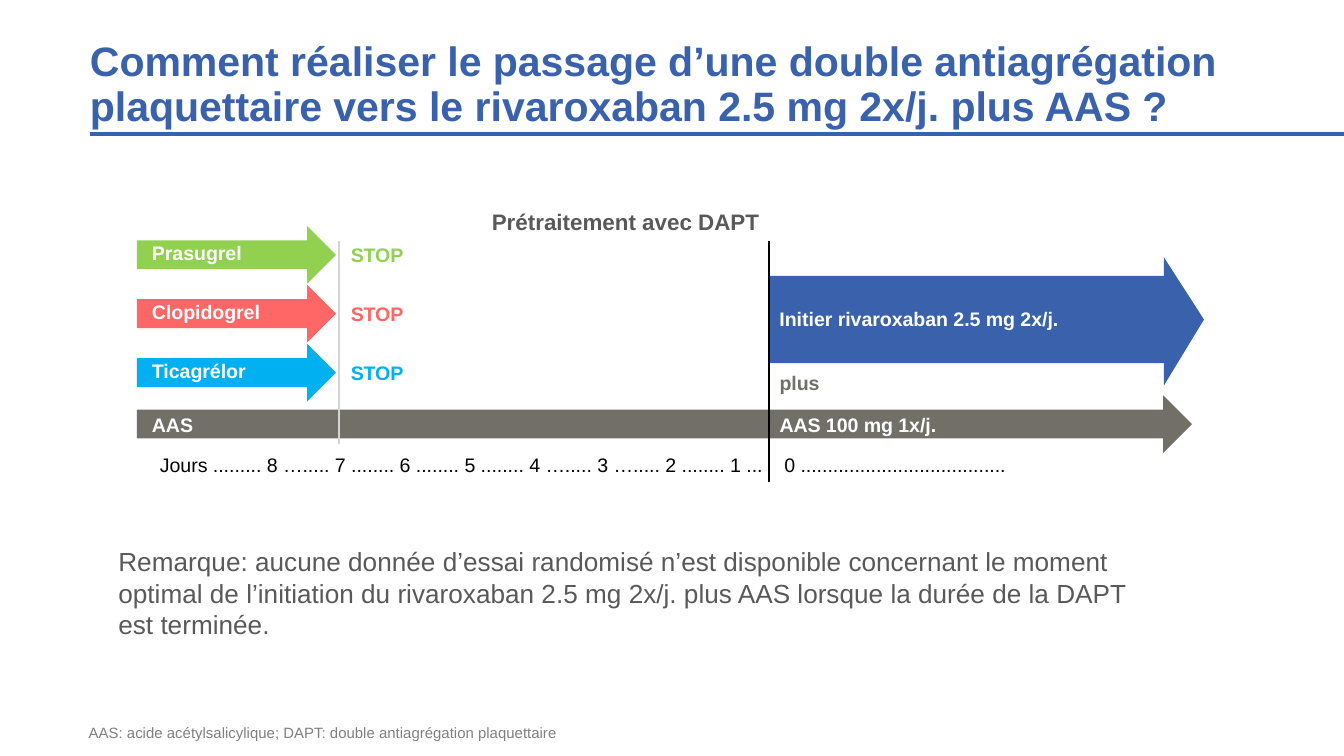
from dataclasses import dataclass

from lxml.etree import SubElement
from pptx import Presentation
from pptx.dml.color import RGBColor
from pptx.enum.shapes import MSO_CONNECTOR, MSO_SHAPE
from pptx.enum.text import MSO_ANCHOR, MSO_AUTO_SIZE, PP_ALIGN
from pptx.oxml.ns import qn
from pptx.util import Pt


@dataclass(frozen=True)
class Theme:
    font: str = "Arial"
    blue: str = "3961AC"
    green: str = "92D050"
    red: str = "FF6666"
    cyan: str = "00B0F0"
    taupe: str = "726F69"
    text: str = "595959"
    footnote: str = "808080"
    rule: str = "D5D4D2"
    white: str = "FFFFFF"
    black: str = "000000"
    title_size: float = 22
    note_size: float = 14
    heading_size: float = 12
    label_size: float = 10.5
    footnote_size: float = 8


T = Theme()

ARROW_LEFT, ARROW_H = 73.4, 31
LABEL_LEFT, STOP_LEFT = 81.4, 187.9
START_X, START_LABEL_LEFT = 411.8, 417.6
FIRST_ROW, ROW_STEP = 121, 31.6


def place(s, left, top, width, height):
    s.left, s.top, s.width, s.height = Pt(left), Pt(top), Pt(width), Pt(height)


def write(s, text, size, color, bold=False, anchor=MSO_ANCHOR.TOP, tab=None):
    tf = s.text_frame
    tf.word_wrap = True
    tf.auto_size = MSO_AUTO_SIZE.NONE
    tf.vertical_anchor = anchor
    tf.margin_left = tf.margin_top = tf.margin_right = tf.margin_bottom = 0
    tf.text = text
    p = tf.paragraphs[0]
    p.alignment = PP_ALIGN.LEFT
    if tab:
        tabs = SubElement(p._p.get_or_add_pPr(), qn("a:tabLst"))
        SubElement(tabs, qn("a:tab"), pos=str(Pt(tab)), algn="l")
    p.font.name = T.font
    p.font.size = Pt(size)
    p.font.bold = bold
    p.font.color.rgb = RGBColor.from_string(color)
    return p


def add_title(sld, text):
    s = sld.shapes.title
    place(s, 48.2, 21.6, 652.3, 48.2)
    p = write(s, text, T.title_size, T.blue, True, MSO_ANCHOR.BOTTOM)
    p.line_spacing = 0.9


def add_text(sld, text, left, top, width, height, size, color, **style):
    s = sld.shapes.add_textbox(Pt(left), Pt(top), Pt(width), Pt(height))
    write(s, text, size, color, **style)


def add_label(sld, text, left, top, width, color=T.white):
    add_text(sld, text, left, top, width, 15, T.label_size, color, bold=True)


def paint(s, color):
    s.shadow.inherit = False
    s.fill.solid()
    s.fill.fore_color.rgb = RGBColor.from_string(color)
    s.line.fill.background()


def add_arrow(sld, top, width, color):
    s = sld.shapes.add_shape(MSO_SHAPE.RIGHT_ARROW, Pt(ARROW_LEFT), Pt(top),
                             Pt(width), Pt(ARROW_H))
    paint(s, color)


def add_block_arrow(sld, points, color):
    start, *rest = [(Pt(x), Pt(y)) for x, y in points]
    fb = sld.shapes.build_freeform(*start)
    fb.add_line_segments(rest, close=True)
    paint(fb.convert_to_shape(), color)


def add_line(sld, x1, y1, x2, y2, color, width):
    s = sld.shapes.add_connector(MSO_CONNECTOR.STRAIGHT,
                                 Pt(x1), Pt(y1), Pt(x2), Pt(y2))
    s.line.color.rgb = RGBColor.from_string(color)
    s.line.width = Pt(width)
    SubElement(s._element.spPr, qn("a:effectLst"))


def add_stopped_drugs(sld):
    drugs = [("Prasugrel", T.green), ("Clopidogrel", T.red), ("Ticagrélor", T.cyan)]
    for i, (name, color) in enumerate(drugs):
        top = FIRST_ROW + i * ROW_STEP
        add_arrow(sld, top, 106.6, color)
        add_label(sld, name, LABEL_LEFT, top + 7.9, 82)
        add_label(sld, "STOP", STOP_LEFT, top + 9.2, 42.5, color)


def add_continued_drugs(sld):
    add_arrow(sld, 211.7, 565.2, T.taupe)
    add_label(sld, "AAS", LABEL_LEFT, 221, 82)
    add_label(sld, "AAS 100 mg 1x/j.", START_LABEL_LEFT, 221, 140)
    add_block_arrow(sld, [(START_X, 147.8), (623.5, 147.8), (623.5, 137.8),
                          (645, 171.2), (623.5, 206.6), (623.5, 194.5),
                          (START_X, 194.5)], T.blue)
    add_label(sld, "Initier rivaroxaban 2.5 mg 2x/j.", START_LABEL_LEFT, 164.2, 204.5)
    add_label(sld, "plus", START_LABEL_LEFT, 198.7, 140, T.taupe)


def add_timeline(sld):
    days = ("Jours ......... 8 …..... 7 ........ 6 ........ 5 ........ 4 …..... 3 "
            "…..... 2 ........ 1 ...\t0 ......................................")
    add_text(sld, days, 85.7, 242.6, 508, 15, T.label_size, T.black, tab=334.5)
    add_line(sld, 181.4, 129.4, 181.4, 237.6, T.rule, 1)
    add_line(sld, START_X, 129.4, START_X, 258.5, T.black, 1)


def main():
    prs = Presentation()
    prs.slide_width, prs.slide_height = Pt(720), Pt(405)
    sld = prs.slides.add_slide(prs.slide_layouts[5])

    add_line(sld, 48.2, 72, 720, 72, T.blue, 2.25)
    add_title(sld, "Comment réaliser le passage d’une double antiagrégation "
                   "plaquettaire vers le rivaroxaban 2.5 mg 2x/j. plus AAS ?")
    add_text(sld, "AAS: acide acétylsalicylique; DAPT: double antiagrégation plaquettaire",
             47.5, 388.1, 267, 9.4, T.footnote_size, T.footnote, anchor=MSO_ANCHOR.BOTTOM)
    add_text(sld, "Remarque: aucune donnée d’essai randomisé n’est disponible concernant "
                  "le moment optimal de l’initiation du rivaroxaban 2.5 mg 2x/j. plus AAS "
                  "lorsque la durée de la DAPT est terminée.",
             63.4, 289.4, 557.2, 56.2, T.note_size, T.text, anchor=MSO_ANCHOR.MIDDLE)
    add_stopped_drugs(sld)
    add_text(sld, "Prétraitement avec DAPT", 263.5, 111.6, 172, 31,
             T.heading_size, T.text, bold=True)
    add_continued_drugs(sld)
    add_timeline(sld)
    prs.save("out.pptx")


if __name__ == "__main__":
    main()
